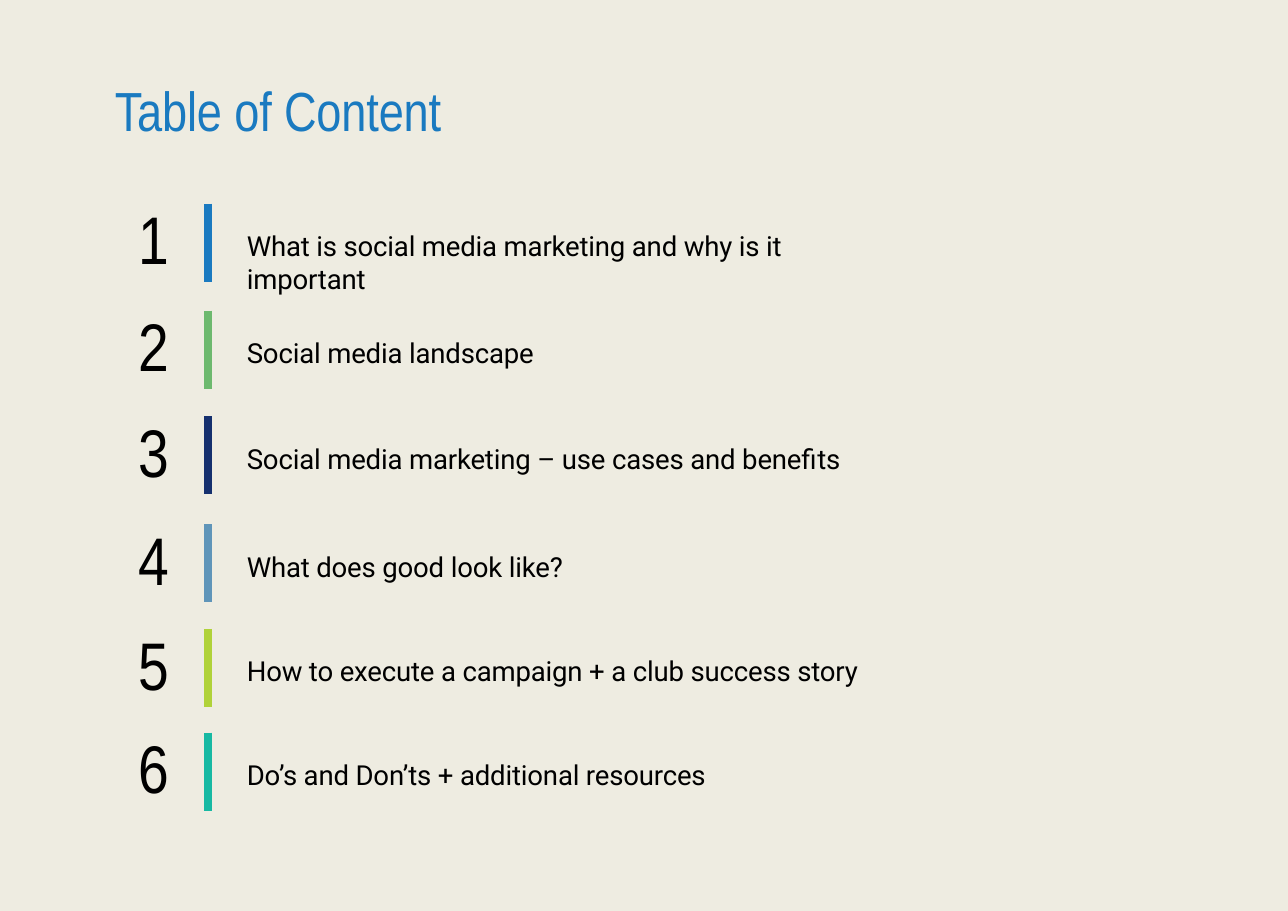
from dataclasses import dataclass

import pptx
import pptx.dml.color
import pptx.enum.shapes
import pptx.enum.text
import pptx.oxml.ns
import pptx.util
from lxml import etree

Pt = pptx.util.Pt


@dataclass(frozen=True)
class Theme:
    background: str = "EEECE1"
    title_colour: str = "1A7AC0"
    text_colour: str = "000000"
    heading_font: str = "Arial Narrow"
    body_font: str = "Roboto"
    title_size: float = 36
    number_size: float = 44
    topic_size: float = 18
    bar_width: float = 5
    tight_spacing: int = -10  # hundredths of a point


THEME = Theme()
PAGE_WIDTH, PAGE_HEIGHT = 841.68, 595.44
ROW_LEFT, ROW_WIDTH, ROW_HEIGHT = 90.7, 490.6, 51

# Top of the row, bar colour, topic
TOPICS = [
    (133.2, "1A7AC0", "What is social media marketing and why is it important"),
    (203, "6DB96E", "Social media landscape"),
    (272.2, "15306E", "Social media marketing – use cases and benefits"),
    (342.7, "5F95B9", "What does good look like?"),
    (411.1, "B0D239", "How to execute a campaign + a club success story"),
    (478.8, "17B9A3", "Do’s and Don’ts + additional resources"),
]


def rgb(colour):
    return pptx.dml.color.RGBColor.from_string(colour)


def add_text(page, box, text, font, size, colour, spacing=0):
    """Place one paragraph, without insets, in box (left, top, width, height)."""
    frame = page.shapes.add_textbox(*map(Pt, box)).text_frame
    frame.word_wrap = True
    frame.vertical_anchor = pptx.enum.text.MSO_ANCHOR.TOP
    frame.margin_left = frame.margin_right = 0
    frame.margin_top = frame.margin_bottom = 0
    frame.text = text
    for span in frame.paragraphs[0].runs:
        span.font.name = font
        span.font.size = Pt(size)
        span.font.color.rgb = rgb(colour)
        span._r.get_or_add_rPr().set("spc", str(spacing))


def add_bar(page, x, top, height, colour):
    bar = page.shapes.add_connector(
        pptx.enum.shapes.MSO_CONNECTOR.STRAIGHT,
        Pt(x), Pt(top), Pt(x), Pt(top + height))
    bar.line.color.rgb = rgb(colour)
    bar.line.width = Pt(THEME.bar_width)
    etree.SubElement(bar._element.spPr, pptx.oxml.ns.qn("a:effectLst"))


def add_title(page, box):
    add_text(page, box, "Table of Content", THEME.heading_font,
             THEME.title_size, THEME.title_colour, THEME.tight_spacing)


def add_topic_row(page, box, number, colour, topic):
    """Place number, coloured bar and topic side by side in box."""
    left, top, width, height = box
    bar_offset, topic_offset = 45.4, 70.6
    add_text(page, (left, top - 4, 26, 52), str(number), THEME.heading_font,
             THEME.number_size, THEME.text_colour)
    add_bar(page, left + bar_offset, top, height, colour)
    add_text(page, (left + topic_offset, top + 16.5, width - topic_offset, 24),
             topic, THEME.body_font, THEME.topic_size, THEME.text_colour,
             THEME.tight_spacing)


def main():
    deck = pptx.Presentation()
    deck.slide_width, deck.slide_height = Pt(PAGE_WIDTH), Pt(PAGE_HEIGHT)
    page = deck.slides.add_slide(deck.slide_layouts[6])
    page.background.fill.solid()
    page.background.fill.fore_color.rgb = rgb(THEME.background)
    add_title(page, (75, 49.7, 406, 44))
    for number, (top, colour, topic) in enumerate(TOPICS, start=1):
        add_topic_row(page, (ROW_LEFT, top, ROW_WIDTH, ROW_HEIGHT),
                      number, colour, topic)
    deck.save("out.pptx")


if __name__ == "__main__":
    main()
